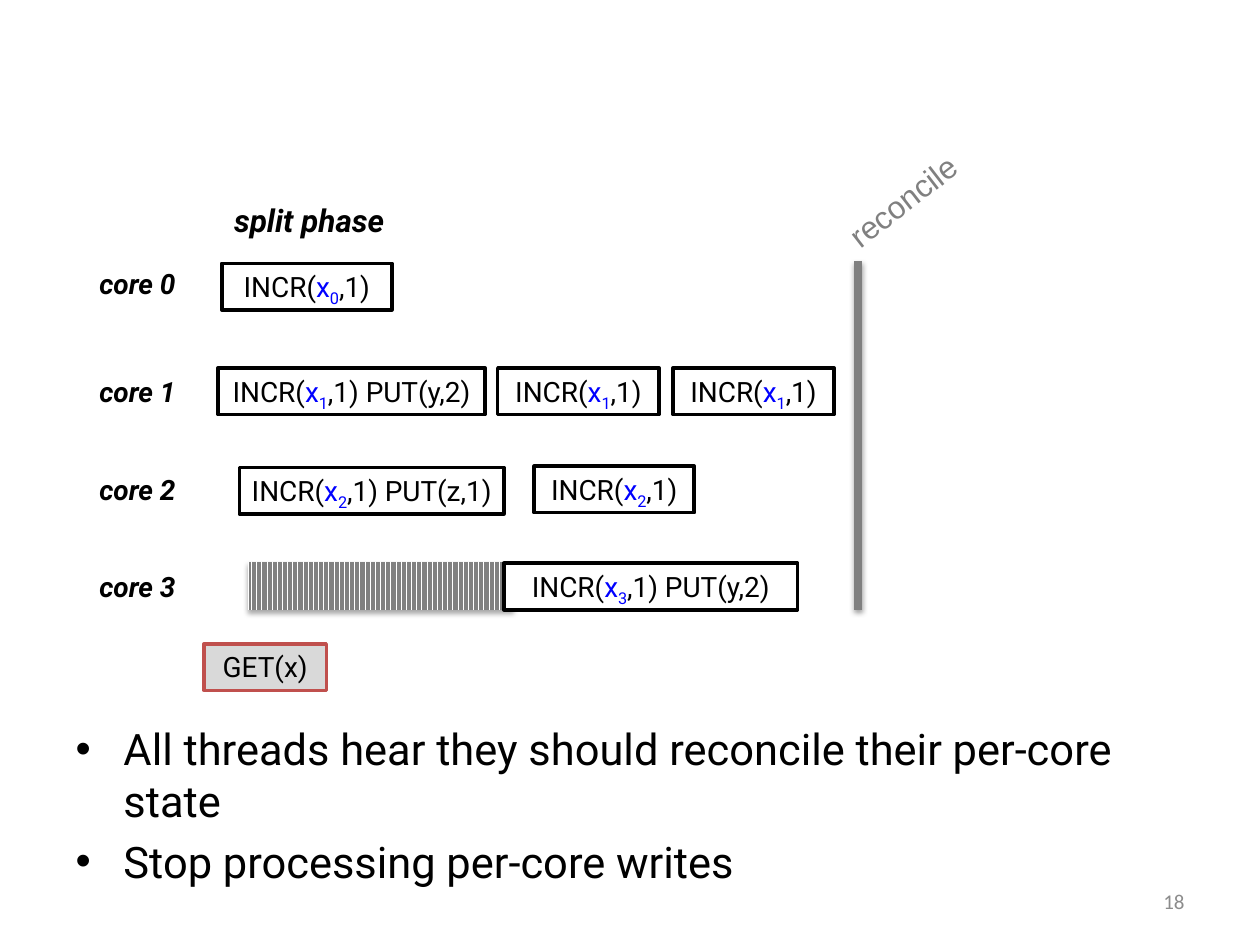
import pptx
import pptx.util
import pptx.dml.color
import pptx.enum.dml
import pptx.enum.shapes
import pptx.enum.text
import pptx.oxml
import pptx.oxml.ns

Inches, Pt = pptx.util.Inches, pptx.util.Pt
ALIGN = pptx.enum.text.PP_ALIGN
RECTANGLE = pptx.enum.shapes.MSO_SHAPE.RECTANGLE

COLORS = {"ink": "000000", "paper": "FFFFFF", "split": "0000FF", "gray": "808080",
          "stash": "D9D9D9", "alert": "C0504D", "number": "8C8C8C"}

# Content: per core, the label top and the operations (left, top, width, tail)
CORES = [
    (2.07, [(1.76, 2.09, 1.35, ",1)")]),
    (2.92, [(1.73, 2.92, 2.12, ",1) PUT(y,2)"), (3.95, 2.92, 1.28, ",1)"),
            (5.34, 2.92, 1.28, ",1)")]),
    (3.70, [(1.90, 3.71, 2.10, ",1) PUT(z,1)"), (4.24, 3.70, 1.27, ",1)")]),
    (4.47, [(4.00, 4.47, 2.33, ",1) PUT(y,2)")]),
]
BULLETS = ["All threads hear they should reconcile their per-core state",
           "Stop processing per-core writes"]
BOX_HEIGHT = 0.37

OPERATION = {"name": "Roboto", "size": Pt(16)}
CORE_LABEL = {**OPERATION, "bold": True, "italic": True}
PHASE_LABEL = {**CORE_LABEL, "size": Pt(18)}
RECONCILE = {"name": "Arial", "size": Pt(18)}
PAGE_NUMBER = {"name": "Calibri", "size": Pt(12)}
BULLET = {"name": "Roboto", "size": Pt(24.8)}
BOX_FRAME = {"word_wrap": True, "margin_left": Inches(0.05), "margin_right": Inches(0.05),
             "vertical_anchor": pptx.enum.text.MSO_ANCHOR.TOP}


def rgb(color):
    return pptx.dml.color.RGBColor.from_string(COLORS[color])


def apply_format(target, values):
    for attribute, value in values.items():
        setattr(target, attribute, value)


def add_run(paragraph, text, style, color="ink", subscript=False):
    run = paragraph.add_run()
    run.text = text
    apply_format(run.font, style)
    run.font.color.rgb = rgb(color)
    if subscript:
        run.font._element.set("baseline", "-25000")


def add_label(slide, text, place, style, color="ink", align=ALIGN.LEFT, rotation=0):
    label = slide.shapes.add_textbox(*map(Inches, place))
    label.rotation = rotation
    label.text_frame.word_wrap = False
    paragraph = label.text_frame.paragraphs[0]
    paragraph.alignment = align
    add_run(paragraph, text, style, color)
    return label


def add_box(slide, place, runs, fill="paper", line="ink"):
    box = slide.shapes.add_shape(RECTANGLE, *map(Inches, place))
    box.shadow.inherit = False
    box.fill.solid()
    box.fill.fore_color.rgb = rgb(fill)
    box.line.color.rgb = rgb(line)
    box.line.width = Pt(2)
    apply_format(box.text_frame, BOX_FRAME)
    paragraph = box.text_frame.paragraphs[0]
    paragraph.alignment = ALIGN.CENTER
    for text, color, subscript in runs:
        add_run(paragraph, text, OPERATION, color, subscript)


def add_shadow(shape, opacity, distance):
    properties = shape._element.spPr
    for effects in properties.findall(pptx.oxml.ns.qn("a:effectLst")):
        properties.remove(effects)
    properties.append(pptx.oxml.parse_xml(
        f'<a:effectLst {pptx.oxml.ns.nsdecls("a")}>'
        f'<a:outerShdw blurRad="{Pt(3.1)}" dist="{Pt(distance)}" dir="5400000" rotWithShape="0">'
        f'<a:srgbClr val="{COLORS["ink"]}"><a:alpha val="{opacity * 1000}"/></a:srgbClr>'
        '</a:outerShdw></a:effectLst>'))


def add_bullets(slide):
    body = slide.placeholders[1]
    body.left, body.top, body.width, body.height = map(Inches, (0.5, 5.68, 9.22, 1.27))
    frame = body.text_frame
    frame.auto_size = pptx.enum.text.MSO_AUTO_SIZE.NONE
    for index, text in enumerate(BULLETS):
        paragraph = frame.add_paragraph() if index else frame.paragraphs[0]
        paragraph.space_before = Pt(5)
        indents = paragraph._p.get_or_add_pPr()
        indents.set("marL", str(Inches(0.38)))
        indents.set("indent", str(Inches(-0.38)))
        add_run(paragraph, text, BULLET)


def main():
    deck = pptx.Presentation()
    deck.slide_width, deck.slide_height = Inches(10), Inches(7.5)
    slide = deck.slides.add_slide(deck.slide_layouts[1])
    title = slide.shapes.title._element
    title.getparent().remove(title)
    add_bullets(slide)

    # Hatched wait on core 3
    wait = slide.shapes.add_shape(RECTANGLE, *map(Inches, (1.97, 4.46, 2.1, 0.38)))
    wait.shadow.inherit = False
    wait.fill.patterned()
    wait.fill.pattern = pptx.enum.dml.MSO_PATTERN.DARK_VERTICAL
    wait.fill.fore_color.rgb = rgb("gray")
    wait.fill.back_color.rgb = rgb("paper")
    wait.line.fill.background()
    add_shadow(wait, 35, 1.8)

    # Core timelines
    for core, (label_top, operations) in enumerate(CORES):
        add_label(slide, f"core {core}", (0.69, label_top, 0.92, BOX_HEIGHT), CORE_LABEL)
        for left, top, width, tail in operations:
            add_box(slide, (left, top, width, BOX_HEIGHT),
                    [("INCR(", "ink", False), ("x", "split", False),
                     (str(core), "split", True), (tail, "ink", False)])

    # Stashed read
    add_box(slide, (1.62, 5.11, 0.97, BOX_HEIGHT), [("GET(x)", "ink", False)],
            fill="stash", line="alert")

    # Reconcile barrier
    barrier = slide.shapes.add_connector(pptx.enum.shapes.MSO_CONNECTOR.STRAIGHT,
                                         *map(Inches, (6.81, 2.07, 6.81, 4.84)))
    barrier.line.color.rgb = rgb("gray")
    barrier.line.width = Pt(4.5)
    add_shadow(barrier, 38, 1.6)
    add_label(slide, "reconcile", (6.56, 1.38, 1.24, 0.4), RECONCILE, "gray", rotation=322.3)

    # Phase heading and page number
    add_label(slide, "split phase", (1.76, 1.55, 1.58, 0.4), PHASE_LABEL)
    number = add_label(slide, "18", (7.17, 6.95, 2.33, 0.4), PAGE_NUMBER, "number", ALIGN.RIGHT)
    number.text_frame.word_wrap = True
    number.text_frame.vertical_anchor = pptx.enum.text.MSO_ANCHOR.MIDDLE

    deck.save("out.pptx")


if __name__ == "__main__":
    main()
